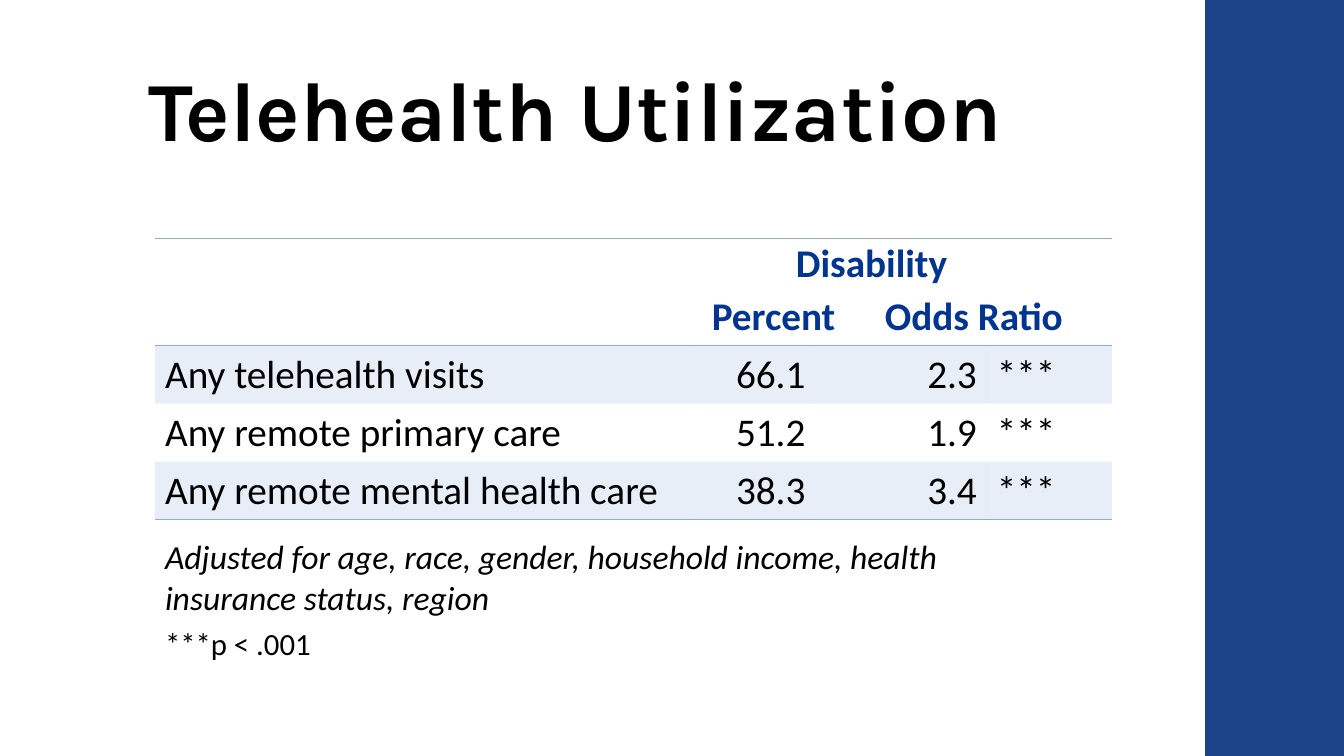
from lxml.etree import SubElement
from pptx import Presentation
from pptx.dml.color import RGBColor
from pptx.enum.shapes import MSO_SHAPE
from pptx.enum.text import MSO_ANCHOR, MSO_AUTO_SIZE, PP_ALIGN
from pptx.oxml.ns import qn
from pptx.util import Cm, Pt

BLACK = RGBColor(0x00, 0x00, 0x00)
NAVY = RGBColor(0x01, 0x35, 0x91)
BAR_BLUE = RGBColor(0x1B, 0x43, 0x88)
RULE_BLUE = RGBColor(0x8E, 0xAA, 0xDB)

TITLE = {"name": "Karla", "size": Pt(60), "bold": True}
HEADER = {"size": Pt(28), "bold": True, "color": NAVY}
BODY = {"size": Pt(28)}
NOTE = {"size": Pt(24), "italic": True}
SIGNIFICANCE = {"size": Pt(22)}

COLUMN_WIDTHS = (13.49, 3.15, 1.04, 3.28, 3.15)
HEADER_HEIGHT, ROW_HEIGHT = 2.69, 1.46
ROWS = (
    ("Any telehealth visits", "66.1", "2.3", "***"),
    ("Any remote primary care", "51.2", "1.9", "***"),
    ("Any remote mental health care", "38.3", "3.4", "***"),
)
TEXT_COLUMNS = (0, 1, 2, 4)
ALIGNMENTS = (PP_ALIGN.LEFT, PP_ALIGN.RIGHT, PP_ALIGN.RIGHT, PP_ALIGN.LEFT)


def write(tf, text, style, align=PP_ALIGN.LEFT):
    p = tf.paragraphs[0]
    p.alignment = align
    r = p.add_run()
    r.text = text
    values = {"name": "Calibri", "bold": False, "color": BLACK, **style}
    r.font.color.rgb = values.pop("color")
    for key, value in values.items():
        setattr(r.font, key, value)


def set_title(slide, text, box):
    sp = slide.shapes.title
    sp.left, sp.top, sp.width, sp.height = map(Cm, box)
    tf = sp.text_frame
    tf.auto_size = MSO_AUTO_SIZE.NONE
    tf.vertical_anchor = MSO_ANCHOR.BOTTOM
    tf.paragraphs[0].line_spacing = 0.9
    write(tf, text, TITLE)


def add_bar(slide, box):
    sp = slide.shapes.add_shape(MSO_SHAPE.RECTANGLE, *map(Cm, box))
    sp.shadow.inherit = False
    sp.fill.solid()
    sp.fill.fore_color.rgb = BAR_BLUE
    sp.line.fill.background()


def add_text(slide, text, box, style):
    tf = slide.shapes.add_textbox(*map(Cm, box)).text_frame
    tf.word_wrap = True
    write(tf, text, style)


def set_borders(cell, ruled_sides):
    tc_pr = cell._tc.get_or_add_tcPr()
    for side in "LRTB":
        ln = SubElement(tc_pr, qn(f"a:ln{side}"), w=str(Pt(1)))
        if side in ruled_sides:
            fill = SubElement(ln, qn("a:solidFill"))
            SubElement(fill, qn("a:srgbClr"), val=str(RULE_BLUE))
        else:
            SubElement(ln, qn("a:noFill"))


def set_fill(cell, shaded):
    if not shaded:
        cell.fill.background()
        return
    cell.fill.solid()
    cell.fill.fore_color.rgb = RULE_BLUE
    color = cell._tc.tcPr.find(qn("a:solidFill")).find(qn("a:srgbClr"))
    SubElement(color, qn("a:alpha"), val="20000")


def add_results_table(slide, left, top):
    last = len(ROWS)
    width = sum(COLUMN_WIDTHS)
    height = HEADER_HEIGHT + last * ROW_HEIGHT
    table = slide.shapes.add_table(
        last + 1, len(COLUMN_WIDTHS), *map(Cm, (left, top, width, height))
    ).table
    table.first_row = table.horz_banding = False
    for column, column_width in zip(table.columns, COLUMN_WIDTHS):
        column.width = Cm(column_width)
    for i, row in enumerate(table.rows):
        row.height = Cm(ROW_HEIGHT if i else HEADER_HEIGHT)
        sides = ("T" if i < 2 else "") + ("B" if i in (0, last) else "")
        for cell in row.cells:
            set_borders(cell, sides)
            set_fill(cell, i % 2 == 1)

    for first in (1, 3):
        table.cell(0, first).merge(table.cell(0, first + 1))
    percent = table.cell(0, 1)
    percent.vertical_anchor = MSO_ANCHOR.BOTTOM
    write(percent.text_frame, "Percent", HEADER, PP_ALIGN.CENTER)
    for i, values in enumerate(ROWS, 1):
        table.cell(i, 2).merge(table.cell(i, 3))
        for col, text, align in zip(TEXT_COLUMNS, values, ALIGNMENTS):
            write(table.cell(i, col).text_frame, text, BODY, align)


def main():
    prs = Presentation()
    prs.slide_width, prs.slide_height = Cm(33.87), Cm(19.05)
    slide = prs.slides.add_slide(prs.slide_layouts[5])
    add_bar(slide, (30.37, 0, 3.5, 19.05))
    set_title(slide, "Telehealth Utilization", (3.48, 1.09, 26.54, 3.07))
    add_results_table(slide, 3.91, 6.02)
    add_text(
        slide,
        "Adjusted for age, race, gender, household income, health insurance status, region",
        (3.91, 13.39, 20.47, 2.31),
        NOTE,
    )
    add_text(slide, "***p < .001", (3.91, 15.62, 5.11, 1.19), SIGNIFICANCE)
    add_text(slide, "Disability", (19.81, 5.89, 5.99, 1.45), HEADER)
    add_text(slide, "Odds Ratio", (22.05, 7.21, 5.99, 1.45), HEADER)
    prs.save("out.pptx")


if __name__ == "__main__":
    main()
